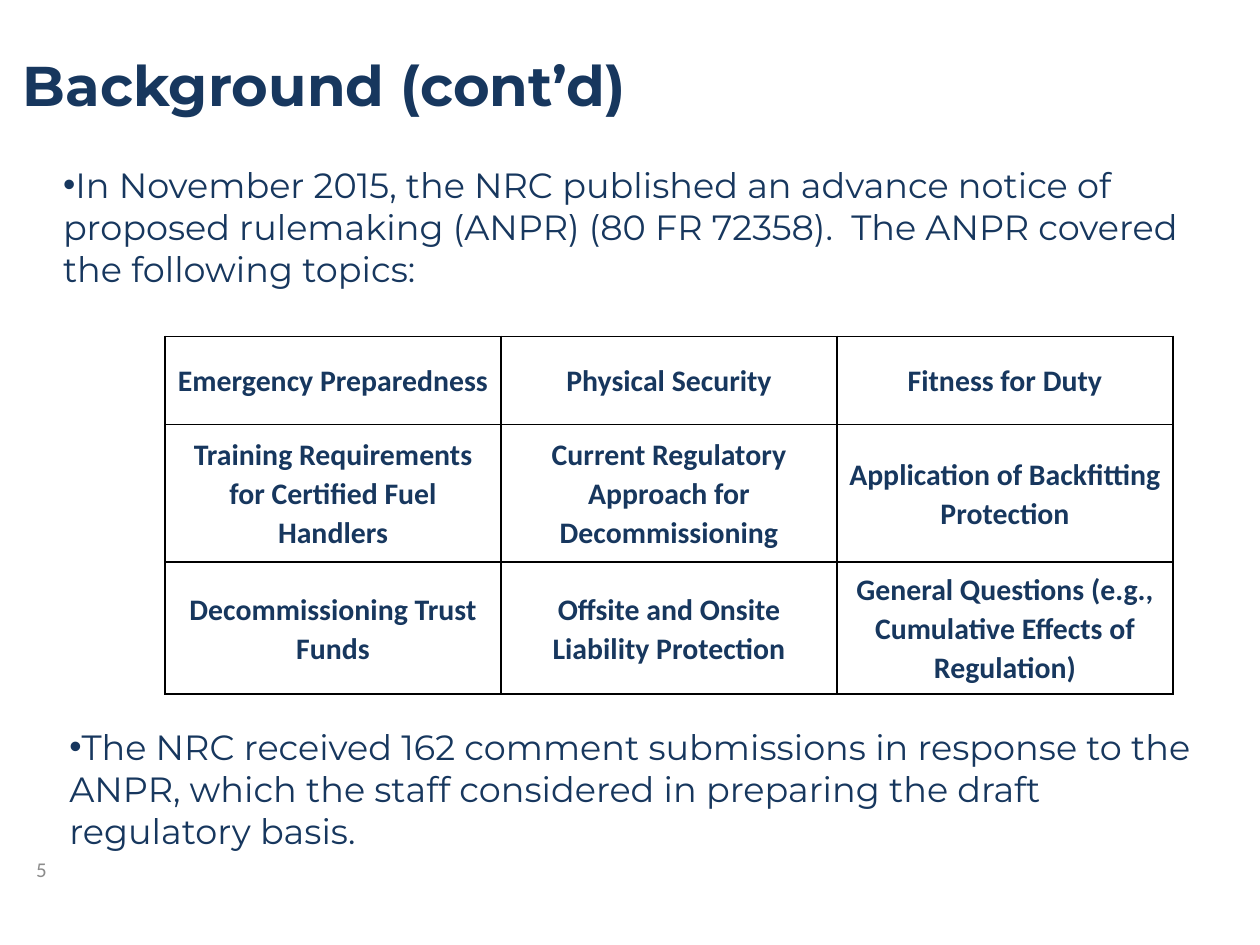
from dataclasses import dataclass

from lxml import etree
from pptx import Presentation
from pptx.dml.color import RGBColor
from pptx.enum.text import MSO_ANCHOR, MSO_AUTO_SIZE, PP_ALIGN
from pptx.oxml.ns import qn
from pptx.util import Inches, Pt

LEFT, CENTER, RIGHT = PP_ALIGN.LEFT, PP_ALIGN.CENTER, PP_ALIGN.RIGHT
TOP, MIDDLE = MSO_ANCHOR.TOP, MSO_ANCHOR.MIDDLE
NO_AUTOFIT = MSO_AUTO_SIZE.NONE
TWO_CONTENT = 3
GRID_COLUMNS, GRID_ROWS = 100, 75


@dataclass(frozen=True)
class Theme:
    navy: str = "17375E"
    gray: str = "8C8C8C"
    border: str = "000000"
    heading_font: str = "Montserrat"
    table_font: str = "Calibri"
    title_size: int = 32
    body_size: int = 20
    table_size: int = 17
    number_size: int = 12


class SlideBuilder:
    def __init__(self, deck, theme):
        self.theme = theme
        self.column = deck.slide_width / GRID_COLUMNS
        self.row = deck.slide_height / GRID_ROWS
        self.slide = deck.slides.add_slide(deck.slide_layouts[TWO_CONTENT])

    def area(self, left, top, width, height):
        return (round(left * self.column), round(top * self.row),
                round(width * self.column), round(height * self.row))

    def add_text(self, frame, text, font, size, color, bold=False, align=LEFT):
        paragraph = frame.paragraphs[0]
        paragraph.alignment = align
        paragraph.space_before = Pt(0)
        run = paragraph.add_run()
        run.text = text
        run.font.name = font
        run.font.size = Pt(size)
        run.font.bold = bold
        run.font.color.rgb = RGBColor.from_string(color)
        return paragraph

    def placeholder(self, index, area, anchor):
        holder = self.slide.placeholders[index]
        holder.left, holder.top, holder.width, holder.height = self.area(*area)
        frame = holder.text_frame
        frame.word_wrap = True
        frame.auto_size = NO_AUTOFIT
        frame.vertical_anchor = anchor
        return frame

    def title(self, text, area):
        theme = self.theme
        self.add_text(self.placeholder(0, area, MIDDLE), text,
                      theme.heading_font, theme.title_size, theme.navy, bold=True)

    def bullet(self, index, text, area):
        theme = self.theme
        paragraph = self.add_text(self.placeholder(index, area, TOP), text,
                                  theme.heading_font, theme.body_size, theme.navy)
        properties = paragraph._p.get_or_add_pPr()
        properties.set("marL", "0")
        properties.set("indent", str(-Inches(0.38)))
        etree.SubElement(properties, qn("a:buChar"), char="•")

    def border(self, cell):
        properties = cell._tc.get_or_add_tcPr()
        for position, side in enumerate(("a:lnL", "a:lnR", "a:lnT", "a:lnB")):
            line = etree.Element(qn(side), w=str(Pt(1)))
            fill = etree.SubElement(line, qn("a:solidFill"))
            etree.SubElement(fill, qn("a:srgbClr"), val=self.theme.border)
            properties.insert(position, line)

    def table(self, topics, area, row_heights):
        theme = self.theme
        grid = self.slide.shapes.add_table(
            len(topics), len(topics[0]), *self.area(*area)).table
        grid.first_row = grid.horz_banding = False
        for row, height, labels in zip(grid.rows, row_heights, topics):
            row.height = round(height * self.row)
            for cell, label in zip(row.cells, labels):
                cell.fill.background()
                cell.vertical_anchor = MIDDLE
                cell.margin_left = cell.margin_right = Inches(0.08)
                cell.margin_top = cell.margin_bottom = 0
                self.border(cell)
                self.add_text(cell.text_frame, label, theme.table_font,
                              theme.table_size, theme.navy, bold=True,
                              align=CENTER).line_spacing = 1.07

    def page_number(self, text, area):
        theme = self.theme
        frame = self.slide.shapes.add_textbox(*self.area(*area)).text_frame
        frame.word_wrap = True
        frame.vertical_anchor = MIDDLE
        self.add_text(frame, text, theme.table_font, theme.number_size,
                      theme.gray, align=RIGHT)


def main():
    deck = Presentation()
    deck.slide_width, deck.slide_height = Inches(10), Inches(7.5)
    background = SlideBuilder(deck, Theme())

    background.title("Background (cont’d)", (0.8, 1.7, 55.8, 10))
    background.bullet(
        1,
        "In November 2015, the NRC published an advance notice of proposed "
        "rulemaking (ANPR) (80 FR 72358).  The ANPR covered the following topics:",
        (4, 12.5, 92.2, 13.8))

    topics = [
        ("Emergency Preparedness", "Physical Security", "Fitness for Duty"),
        ("Training Requirements for Certified Fuel Handlers",
         "Current Regulatory Approach for Decommissioning",
         "Application of Backfitting Protection"),
        ("Decommissioning Trust Funds",
         "Offsite and Onsite Liability Protection",
         "General Questions (e.g., Cumulative Effects of Regulation)"),
    ]
    background.table(topics, (13.1, 26.7, 80, 28.4), (7, 10.9, 10.5))
    background.bullet(
        2,
        "The NRC received 162 comment submissions in response to the ANPR, "
        "which the staff considered in preparing the draft regulatory basis.",
        (4.5, 57.1, 92.2, 13.8))
    background.page_number("5", (0.7, 67, 4, 4))

    deck.save("out.pptx")


if __name__ == "__main__":
    main()
